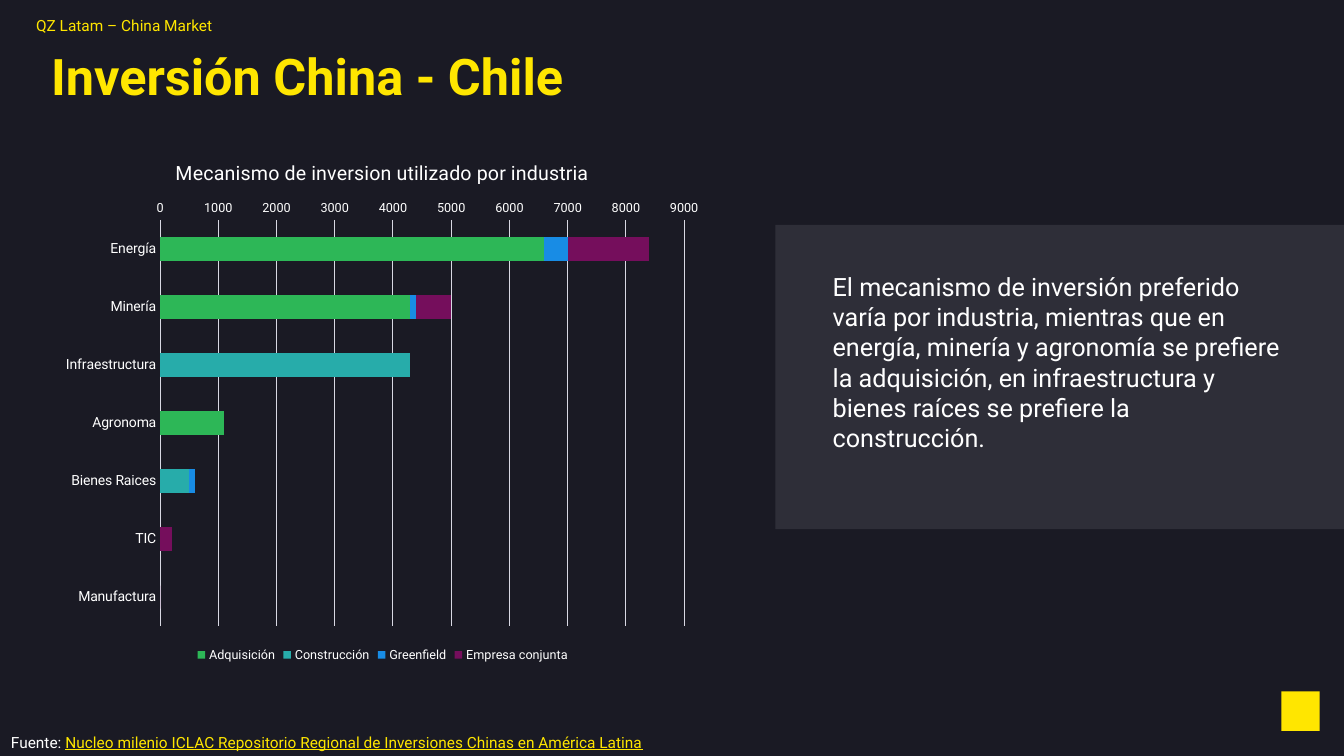
from dataclasses import dataclass

from lxml import etree
from pptx import Presentation
from pptx.chart.data import CategoryChartData
from pptx.dml.color import RGBColor
from pptx.enum.chart import XL_CHART_TYPE, XL_LEGEND_POSITION, XL_TICK_MARK
from pptx.enum.shapes import MSO_SHAPE
from pptx.oxml.ns import qn
from pptx.util import Inches, Pt

HEADER = "QZ Latam – China Market"
TITLE = "Inversión\u00a0China - Chile"
SOURCE_LABEL = "Fuente: "
SOURCE_NAME = "Nucleo milenio ICLAC Repositorio Regional de Inversiones Chinas en América Latina"
FINDING = (
    "El mecanismo de inversión preferido varía por industria, mientras que en "
    "energía, minería y agronomía se prefiere la adquisición, en infraestructura "
    "y bienes raíces se prefiere la construcción."
)
CHART_TITLE = "Mecanismo de inversion utilizado por industria"
INDUSTRIES = ["Energía", "Minería", "Infraestructura", "Agronoma",
              "Bienes Raices", "TIC", "Manufactura"]
MECHANISMS = [
    ("Adquisición", "2DB757", [6600, 4300, None, 1100, 0, None, None]),
    ("Construcción", "27ACAA", [None, None, 4300, None, 500, None, None]),
    ("Greenfield", "188CE5", [400, 100, None, 0, 100, 0, None]),
    ("Empresa conjunta", "750E5C", [1400, 600, None, 0, None, 200, 0]),
]


@dataclass(frozen=True)
class Theme:
    font: str = "Roboto"
    background: str = "1A1A24"
    panel: str = "2E2E38"
    accent: str = "FFE600"
    text: str = "FFFFFF"
    grid: str = "D8D8E3"
    title: int = 36
    body: int = 18
    chart_title: int = 14
    small: int = 11
    category: int = 10
    value: int = 9


THEME = Theme()


def paint(fill, color):
    fill.solid()
    fill.fore_color.rgb = RGBColor.from_string(color)


def style(font, size, color=THEME.text, bold=False):
    font.name = THEME.font
    font.size = Pt(size)
    font.bold = bold
    font.color.rgb = RGBColor.from_string(color)


def add_text(slide, box, text, size, color=THEME.text, bold=False):
    frame = slide.shapes.add_textbox(*map(Inches, box)).text_frame
    frame.word_wrap = True
    paragraph = frame.paragraphs[0]
    paragraph.text = text
    style(paragraph.runs[0].font, size, color, bold)
    return paragraph


def add_block(slide, box, color):
    block = slide.shapes.add_shape(MSO_SHAPE.RECTANGLE, *map(Inches, box))
    block.shadow.inherit = False
    paint(block.fill, color)
    block.line.fill.background()


def place(part, **settings):
    """Give a chart part a manual layout in fractions of the chart."""
    old = part.find(qn("c:layout"))
    layout = etree.Element(qn("c:layout"))
    manual = etree.SubElement(layout, qn("c:manualLayout"))
    for tag, value in settings.items():
        etree.SubElement(manual, qn(f"c:{tag}")).set("val", str(value))
    if old is not None:
        part.replace(old, layout)
    elif part.find(qn("c:tx")) is not None:
        part.find(qn("c:tx")).addnext(layout)
    else:
        part.insert(0, layout)


def add_mechanism_chart(slide):
    content = CategoryChartData()
    content.categories = INDUSTRIES
    for name, _, amounts in MECHANISMS:
        content.add_series(name, amounts)
    box = map(Inches, (0.53, 1.39, 6.53, 5.22))
    chart = slide.shapes.add_chart(XL_CHART_TYPE.BAR_STACKED, *box, content).chart
    style(chart.font, THEME.category)

    chart.has_title = True
    heading = chart.chart_title.text_frame
    heading.text = CHART_TITLE
    style(heading.paragraphs[0].runs[0].font, THEME.chart_title)
    chart.chart_title.include_in_layout = False

    plot = chart.plots[0]
    plot.gap_width, plot.overlap = 150, 100
    plot.vary_by_categories = False
    for series, (_, color, _) in zip(plot.series, MECHANISMS):
        paint(series.format.fill, color)

    industries, amounts = chart.category_axis, chart.value_axis
    industries.reverse_order = True
    amounts.minimum_scale, amounts.maximum_scale, amounts.major_unit = 0, 9000, 1000
    amounts.tick_labels.number_format = "General"
    amounts.tick_labels.number_format_is_linked = False
    for axis, size in ((industries, THEME.category), (amounts, THEME.value)):
        axis.major_tick_mark = axis.minor_tick_mark = XL_TICK_MARK.NONE
        style(axis.tick_labels.font, size)
    amounts.has_major_gridlines = True
    amounts.format.line.fill.background()
    for line in (industries.format.line, amounts.major_gridlines.format.line):
        paint(line.fill, THEME.grid)
        line.width = Pt(0.75)

    chart.has_legend = True
    chart.legend.position = XL_LEGEND_POSITION.BOTTOM
    chart.legend.include_in_layout = False
    style(chart.legend.font, THEME.value)

    drawing = chart.element.find(qn("c:chart"))
    place(drawing.find(qn("c:title")), xMode="edge", yMode="edge", x=0.18, y=0.03)
    place(drawing.find(qn("c:plotArea")), layoutTarget="inner",
          xMode="edge", yMode="edge", x=0.162, y=0.152, w=0.796, h=0.772)


def main():
    deck = Presentation()
    deck.slide_width, deck.slide_height = Inches(13.33), Inches(7.5)
    slide = deck.slides.add_slide(deck.slide_layouts[6])
    paint(slide.background.fill, THEME.background)

    add_block(slide, (12.71, 6.86, 0.38, 0.39), THEME.accent)
    add_text(slide, (0.26, 0.11, 2.4, 0.29), HEADER, THEME.small, THEME.accent)
    title = add_text(slide, (0.41, 0.49, 11.45, 0.7), TITLE, THEME.title, THEME.accent, True)
    title.line_spacing = 0.85
    add_mechanism_chart(slide)

    add_block(slide, (7.69, 2.23, 5.64, 3.02), THEME.panel)
    add_text(slide, (8.16, 2.64, 4.72, 2.52), FINDING, THEME.body)

    source = add_text(slide, (0.01, 7.22, 6.79, 0.28), SOURCE_LABEL, THEME.small)
    name = source.add_run()
    name.text = SOURCE_NAME
    style(name.font, THEME.small, THEME.accent)
    name.font.underline = True

    deck.save("out.pptx")


if __name__ == "__main__":
    main()
